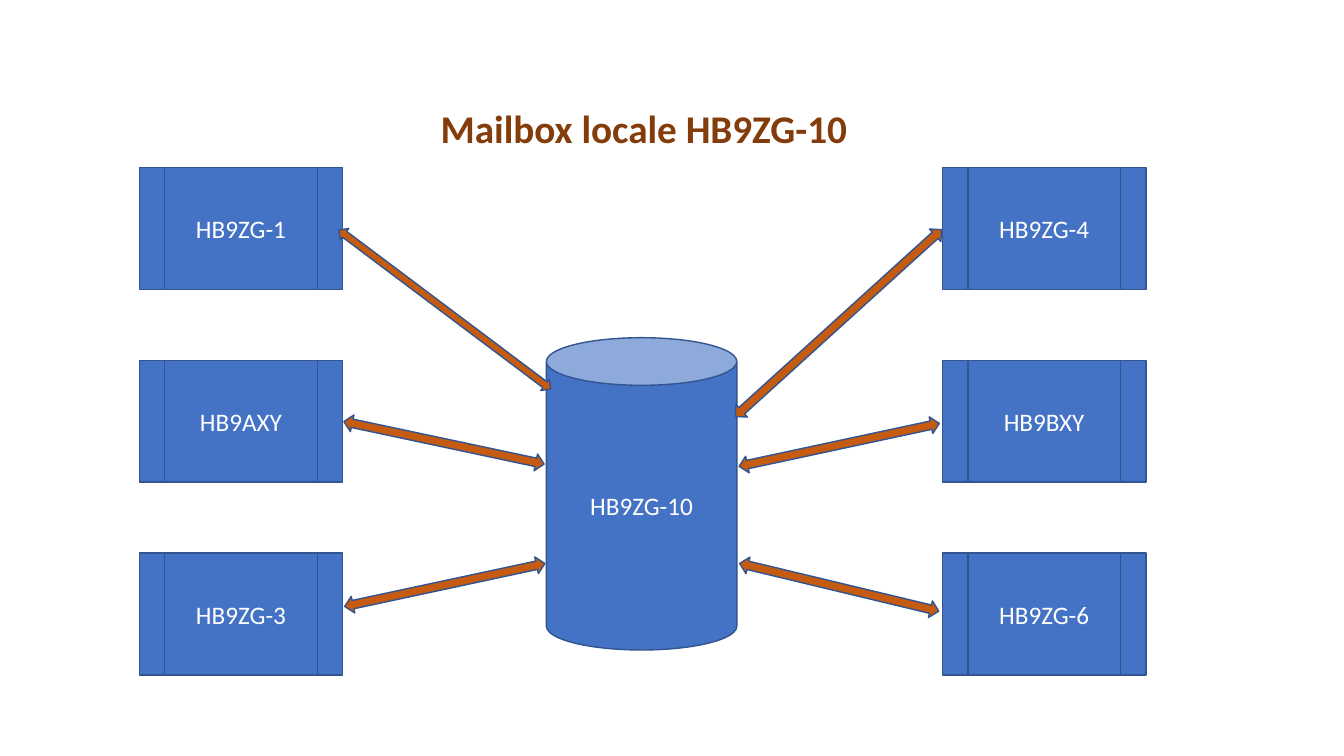
from pptx import Presentation
from pptx.dml.color import RGBColor
from pptx.enum.shapes import MSO_SHAPE as Preset
from pptx.enum.text import MSO_ANCHOR as Anchor, MSO_AUTO_SIZE as AutoSize, PP_ALIGN as Align
from pptx.util import Cm, Pt

BLUE = RGBColor(0x44, 0x72, 0xC4)
OUTLINE = RGBColor(0x32, 0x54, 0x91)
ORANGE = RGBColor(0xC5, 0x5A, 0x11)
BROWN = RGBColor(0x84, 0x3C, 0x0B)
WHITE = RGBColor(0xFF, 0xFF, 0xFF)

STATION_TOP, STATION_STEP = 4.22, 4.86
STATION_COLUMNS = [
    (3.51, ["HB9ZG-1", "HB9AXY", "HB9ZG-3"]),
    (23.75, ["HB9ZG-4", "HB9BXY", "HB9ZG-6"]),
]
# Centre x, centre y, length and thickness in cm, then rotation in degrees
LINKS = [
    (11.21, 7.8, 6.68, 0.36, 36.9),
    (11.19, 11.16, 5.16, 0.43, 12),
    (11.21, 14.74, 5.16, 0.43, -12.1),
    (21.15, 11.21, 5.16, 0.43, -12.1),
    (21.15, 14.8, 5.16, 0.43, 13.5),
    (21.13, 8.14, 7.01, 0.43, -42.2),
]


def add_text(para, text, size, color, bold=False):
    span = para.add_run()
    span.text = text
    span.font.name = "Calibri"
    span.font.size = Pt(size)
    span.font.bold = bold
    span.font.color.rgb = color


def add_preset(page, preset, left, top, width, height, fill):
    """Add an outlined shape; lengths are in centimetres."""
    shape = page.shapes.add_shape(preset, Cm(left), Cm(top), Cm(width), Cm(height))
    shape.shadow.inherit = False
    shape.fill.solid()
    shape.fill.fore_color.rgb = fill
    shape.line.color.rgb = OUTLINE
    shape.line.width = Pt(1)
    return shape


def add_node(page, preset, name, left, top, width, height):
    box = add_preset(page, preset, left, top, width, height, BLUE)
    box.text_frame.vertical_anchor = Anchor.MIDDLE
    para = box.text_frame.paragraphs[0]
    para.alignment = Align.CENTER
    add_text(para, name, 18, WHITE)


def add_link(page, center_x, center_y, length, thickness, angle):
    arrow = add_preset(page, Preset.LEFT_RIGHT_ARROW, center_x - length / 2,
                       center_y - thickness / 2, length, thickness, ORANGE)
    arrow.rotation = angle


def set_title(page, text):
    title = page.shapes.title
    title.left, title.top, title.width, title.height = Cm(10.85), Cm(2.49), Cm(11.35), Cm(1.45)
    frame = title.text_frame
    frame.word_wrap = True
    frame.auto_size = AutoSize.NONE
    frame.vertical_anchor = Anchor.TOP
    para = frame.paragraphs[0]
    para.alignment = Align.LEFT
    add_text(para, text, 28, BROWN, bold=True)


def main():
    deck = Presentation()
    deck.slide_width, deck.slide_height = Cm(33.87), Cm(19.05)
    page = deck.slides.add_slide(deck.slide_layouts.get_by_name("Title Only"))

    set_title(page, "Mailbox locale HB9ZG-10")
    add_node(page, Preset.CAN, "HB9ZG-10", 13.77, 8.51, 4.8, 7.87)
    for left, names in STATION_COLUMNS:
        for row, name in enumerate(names):
            add_node(page, Preset.FLOWCHART_PREDEFINED_PROCESS, name,
                     left, STATION_TOP + row * STATION_STEP, 5.13, 3.07)
    for link in LINKS:
        add_link(page, *link)

    deck.save("out.pptx")


if __name__ == "__main__":
    main()
